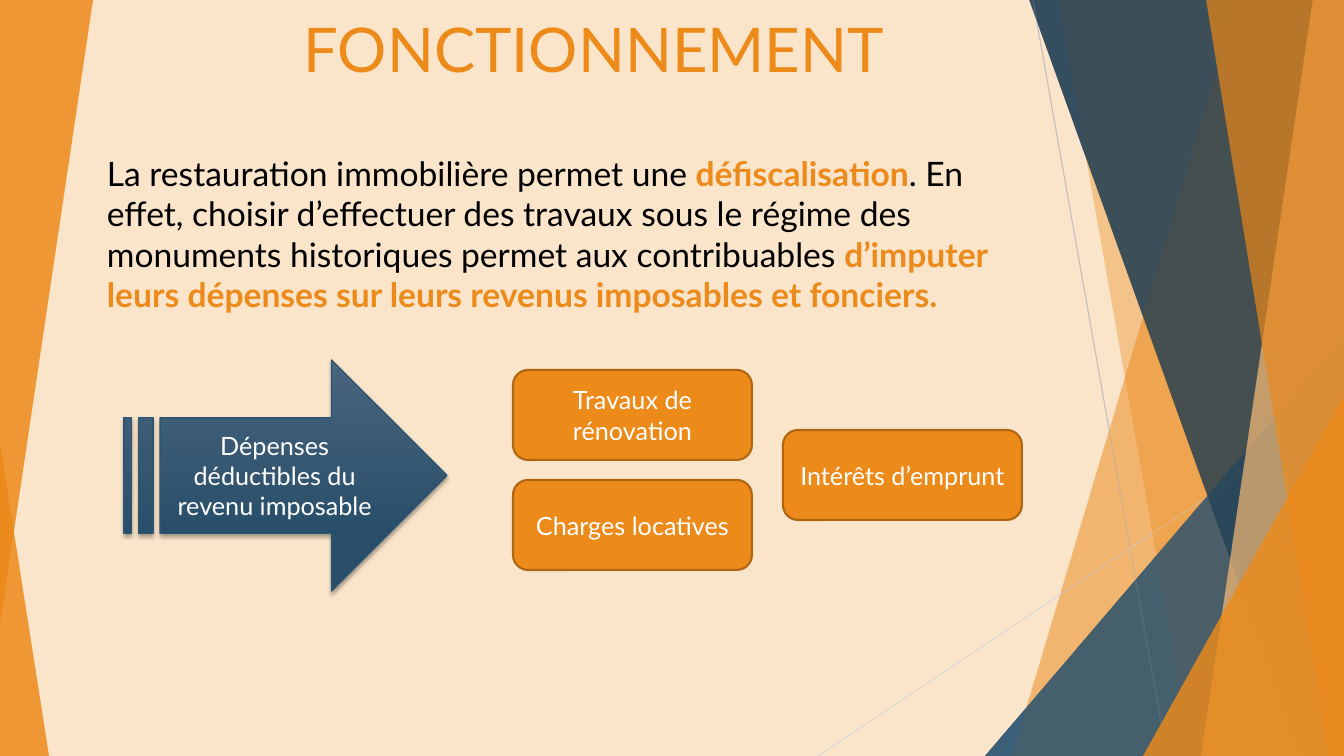
from lxml.etree import SubElement
from pptx import Presentation
from pptx.dml.color import RGBColor
from pptx.enum.shapes import MSO_CONNECTOR, MSO_SHAPE
from pptx.enum.text import MSO_ANCHOR, MSO_AUTO_SIZE, PP_ALIGN
from pptx.oxml.ns import qn
from pptx.util import Pt

PX = 12192000 / 1344  # EMU per px
COLORS = {
    "cream": "FAE4CA", "orange": "EC8A1A", "accent": "EC8B1B", "peach": "F4B976",
    "rust": "AF6613", "blue": "2C5573", "navy": "214056", "slate": "49647D",
    "deep": "284E69", "gray": "BFBFBF", "silver": "D9D9D9",
    "black": "000000", "white": "FFFFFF",
}
RGB = {name: RGBColor.from_string(value) for name, value in COLORS.items()}


def paint(sp, color, alpha=100, line=None, width=1.5):
    sp.shadow.inherit = False
    sp.fill.solid()
    sp.fill.fore_color.rgb = RGB[color]
    if alpha < 100:
        clr = sp.fill._xPr.find(qn("a:solidFill"))[0]
        SubElement(clr, qn("a:alpha"), val=str(alpha * 1000))
    if line:
        sp.line.color.rgb = RGB[line]
        sp.line.width = Pt(width)
    else:
        sp.line.fill.background()


def write(sp, *runs, size=18, color="white", align=PP_ALIGN.CENTER,
          anchor=MSO_ANCHOR.MIDDLE):
    """Each run is a plain string, or a (text, color, bold) tuple."""
    tf = sp.text_frame
    tf.word_wrap = True
    tf.vertical_anchor = anchor
    p = tf.paragraphs[0]
    p.alignment = align
    for run in runs:
        text, shade, bold = (run, color, False) if isinstance(run, str) else run
        r = p.add_run()
        r.text = text
        r.font.name, r.font.size, r.font.bold = "Lato", Pt(size), bold
        r.font.color.rgb = RGB[shade]


prs = Presentation()
prs.slide_width, prs.slide_height = round(1344 * PX), round(756 * PX)
s = prs.slides.add_slide(prs.slide_layouts[6])
s.background.fill.solid()
s.background.fill.fore_color.rgb = RGB["cream"]

# Decoration: two layers of facets, a left wedge in each, hairlines between.
# A band is (top x, bottom x) and runs to the right edge; a triangle is a box.
facets = [
    ((1238, 1012), "orange", 30),
    ((1058, 1192), "orange", 20),
    ((985, 336, 359, 420), "blue", 72),
    ((1029, 1301), "navy", 70),
    ((1313, 1201), "peach", 70),
    ((1206, 1329), "orange", 65),
    ((1143, 396, 201, 360), "orange", 80),
]
hairlines = [((1033, 0, 1167, 756), "gray"), ((1344, 406, 818, 756), "silver")]
layers = [([], (0, 443, 49, 313), 0, 0), (hairlines, (0, 0, 93, 625), 1, 180)]

for lines, wedge, apex, rotation in layers:
    for ends, color in lines:
        cx = s.shapes.add_connector(MSO_CONNECTOR.STRAIGHT, *[round(v * PX) for v in ends])
        cx.line.color.rgb = RGB[color]
        cx.line.width = Pt(0.75)
        SubElement(cx._element.spPr, qn("a:effectLst"))
    for geometry, color, alpha in facets + [(wedge, "orange", 85)]:
        if len(geometry) == 2:
            top, bottom = geometry
            fb = s.shapes.build_freeform(top, -1, scale=PX)
            fb.add_line_segments([(1344, -1), (1344, 756), (bottom, 756)], close=True)
            sp = fb.convert_to_shape()
        else:
            sp = s.shapes.add_shape(MSO_SHAPE.ISOSCELES_TRIANGLE,
                                    *[round(v * PX) for v in geometry])
            sp.adjustments[0] = apex if geometry == wedge else 1
            sp.rotation = rotation if geometry == wedge else 0
        paint(sp, color, alpha)

# Title
title = s.shapes.add_textbox(*[round(v * PX) for v in (166, 0, 856, 90)])
write(title, "FONCTIONNEMENT", size=44, color="orange", anchor=MSO_ANCHOR.BOTTOM)

# Introduction
intro = s.shapes.add_textbox(*[round(v * PX) for v in (97, 148, 908, 214)])
write(intro,
      "La restauration immobilière permet une ",
      ("défiscalisation", "accent", True),
      ". En effet, choisir d’effectuer des travaux sous le régime des monuments "
      "historiques permet aux contribuables ",
      ("d’imputer leurs dépenses sur leurs revenus imposables et fonciers.", "accent", True),
      size=24, color="black", align=PP_ALIGN.LEFT, anchor=MSO_ANCHOR.TOP)
intro.text_frame.auto_size = MSO_AUTO_SIZE.SHAPE_TO_FIT_TEXT

# Arrow with gradient and soft shadow
arrow = s.shapes.add_shape(MSO_SHAPE.STRIPED_RIGHT_ARROW,
                           *[round(v * PX) for v in (124, 360, 323, 231)])
paint(arrow, "deep", line="blue", width=1)
arrow.fill.gradient()
arrow.fill.gradient_angle = 270
for stop, color, position in zip(arrow.fill.gradient_stops, ("slate", "deep"), (0, 0.78)):
    stop.color.rgb = RGB[color]
    stop.position = position
effects = arrow._element.spPr.find(qn("a:effectLst"))
shadow = SubElement(effects, qn("a:outerShdw"), blurRad=str(Pt(3)), dist=str(Pt(2)),
                    dir="5400000", rotWithShape="0")
clr = SubElement(shadow, qn("a:srgbClr"), val=COLORS["black"])
SubElement(clr, qn("a:alpha"), val="35000")
write(arrow, "Dépenses déductibles du revenu imposable")

# Deductible expenses
for label, x, y in [("Travaux de rénovation", 513, 370),
                    ("Charges locatives", 513, 480),
                    ("Intérêts d’emprunt", 783, 430)]:
    sp = s.shapes.add_shape(MSO_SHAPE.ROUNDED_RECTANGLE,
                            *[round(v * PX) for v in (x, y, 239, 90)])
    paint(sp, "orange", line="rust")
    write(sp, label)

prs.save("out.pptx")
